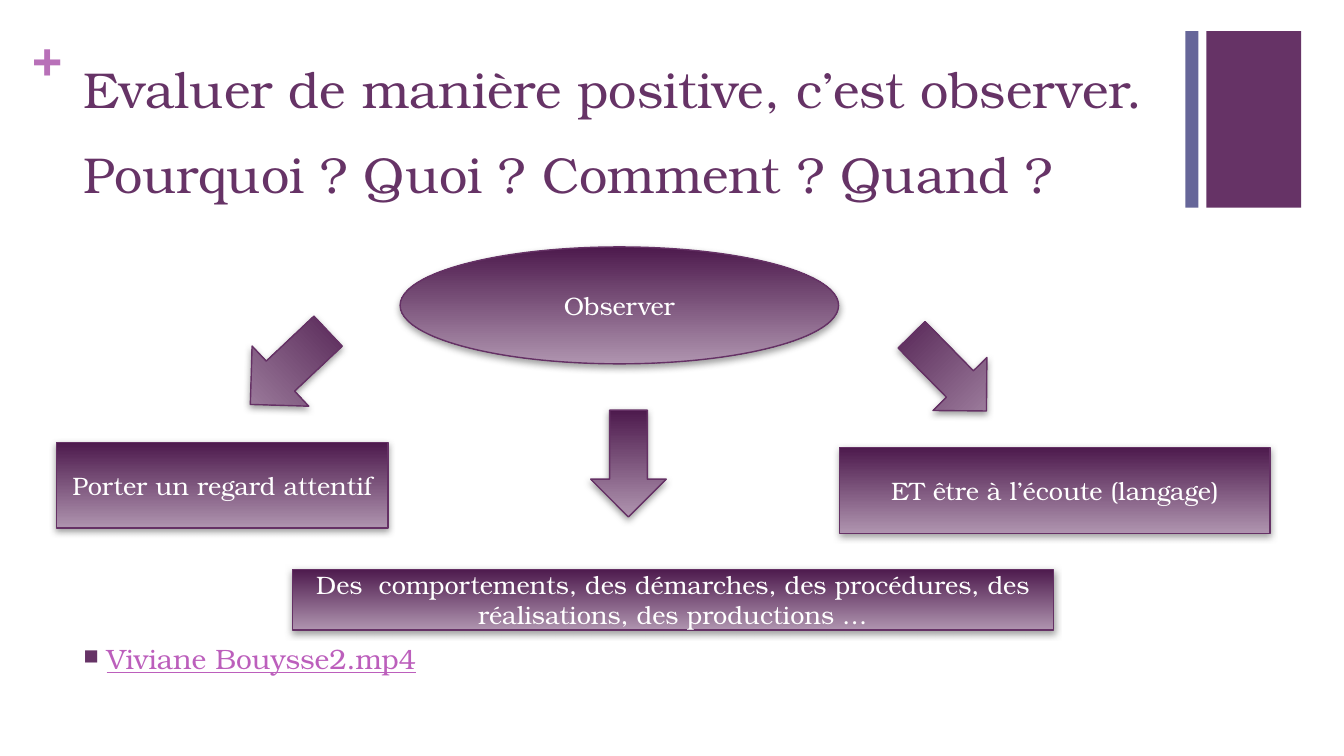
"""Build the slide on positive evaluation through observation."""
from lxml import etree
from pptx import Presentation
from pptx.dml.color import RGBColor
from pptx.enum.shapes import MSO_SHAPE
from pptx.enum.text import MSO_ANCHOR, MSO_AUTO_SIZE, PP_ALIGN
from pptx.oxml import parse_xml
from pptx.util import Pt

FONT = "TeX Gyre Bonum"
PLUM = RGBColor(0x66, 0x33, 0x66)
SLATE = RGBColor(0x66, 0x66, 0x99)
LILAC = RGBColor(0xB8, 0x70, 0xB8)
PINK = RGBColor(0xBC, 0x5F, 0xBC)
DARK = RGBColor(0x4D, 0x1A, 0x4D)
PALE = RGBColor(0xAF, 0x94, 0xAF)
EDGE = RGBColor(0x65, 0x31, 0x65)
WHITE = RGBColor(0xFF, 0xFF, 0xFF)
NS = "http://schemas.openxmlformats.org/drawingml/2006/main"
SHADOW = f"""<a:effectLst xmlns:a="{NS}">
<a:outerShdw blurRad="63500" dist="25400" dir="5400000" rotWithShape="0">
<a:srgbClr val="808080"><a:alpha val="75000"/></a:srgbClr>
</a:outerShdw></a:effectLst>"""


def add_run(para, text, size, color):
    run = para.add_run()
    run.text = text
    run.font.name = FONT
    run.font.size = Pt(size)
    run.font.color.rgb = color
    return run


def add_form(kind, box):
    return slide.shapes.add_shape(kind, *[Pt(v) for v in box])


prs = Presentation()
prs.slide_width, prs.slide_height = Pt(960), Pt(540)
slide = prs.slides.add_slide(prs.slide_layouts[5])

title = slide.shapes.title
title.left, title.top, title.width, title.height = Pt(52.5), Pt(38.2), Pt(793.5), Pt(87.8)
frame = title.text_frame
frame.auto_size = MSO_AUTO_SIZE.NONE
frame.vertical_anchor = MSO_ANCHOR.TOP
frame.paragraphs[0].alignment = PP_ALIGN.LEFT
add_run(frame.paragraphs[0], "Evaluer de manière positive, c’est observer.", 36, PLUM)

for left, width, color in [(861.8, 67.7, PLUM), (846.7, 9.4, SLATE)]:
    bar = add_form(MSO_SHAPE.RECTANGLE, (left, 22.3, width, 126))
    bar.shadow.inherit = False
    bar.fill.solid()
    bar.fill.fore_color.rgb = color
    bar.line.fill.background()

plus = slide.shapes.add_textbox(Pt(23), Pt(18), Pt(27.4), Pt(43.9)).text_frame
plus.word_wrap = True
plus.margin_left = plus.margin_right = plus.margin_top = plus.margin_bottom = 0
add_run(plus.paragraphs[0], "+", 36, LILAC).font.bold = True

body = slide.shapes.add_textbox(Pt(52.5), Pt(103.7), Pt(793.5), Pt(391)).text_frame
body.word_wrap = True
ask = body.paragraphs[0]
ask.line_spacing = 0.9
add_run(ask, "Pourquoi ? Quoi ? Comment ? Quand ?", 36, PLUM)
film = body.add_paragraph()
film.line_spacing = 0.9
film.space_before = Pt(315)
add_run(film, "Viviane Bouysse2.mp4", 20, PINK).font.underline = True
props = film._p.get_or_add_pPr()
props.set("marL", str(Pt(16.5)))
props.set("indent", str(Pt(-16.5)))
tint = etree.SubElement(props, f"{{{NS}}}buClr")
etree.SubElement(tint, f"{{{NS}}}srgbClr", val=str(PLUM))
etree.SubElement(props, f"{{{NS}}}buSzPct", val="75000")
etree.SubElement(props, f"{{{NS}}}buChar", char="■")

OVAL, ARROW, RECT = MSO_SHAPE.OVAL, MSO_SHAPE.DOWN_ARROW, MSO_SHAPE.RECTANGLE
forms = [
    (OVAL, (285.8, 176.4, 313.2, 83.5), 0, "Observer"),
    (ARROW, (421.9, 293, 54, 76.3), 0, ""),
    (ARROW, (177.1, 224.6, 59, 76.3), 46.7, ""),
    (ARROW, (650.9, 228.2, 54, 76.3), 315.5, ""),
    (RECT, (40.3, 316.1, 236.9, 61.2), 0, "Porter un regard attentif"),
    (RECT, (599.8, 319.7, 307.4, 61.2), 0, "ET être à l’écoute (langage)"),
    (RECT, (208.8, 406.8, 543.6, 43.2), 0,
     "Des  comportements, des démarches, des procédures, des réalisations, des productions …"),
]
for kind, box, turn, text in forms:
    form = add_form(kind, box)
    form.rotation = turn
    form.fill.gradient()
    form.fill.gradient_angle = 270
    for stop, color in zip(form.fill.gradient_stops, (DARK, PALE)):
        stop.color.rgb = color
    form.line.color.rgb = EDGE
    form.line.width = Pt(1)
    form._element.spPr.append(parse_xml(SHADOW))
    if text:
        frame = form.text_frame
        frame.word_wrap = True
        frame.vertical_anchor = MSO_ANCHOR.MIDDLE
        frame.paragraphs[0].alignment = PP_ALIGN.CENTER
        add_run(frame.paragraphs[0], text, 18, WHITE)

prs.save("out.pptx")
